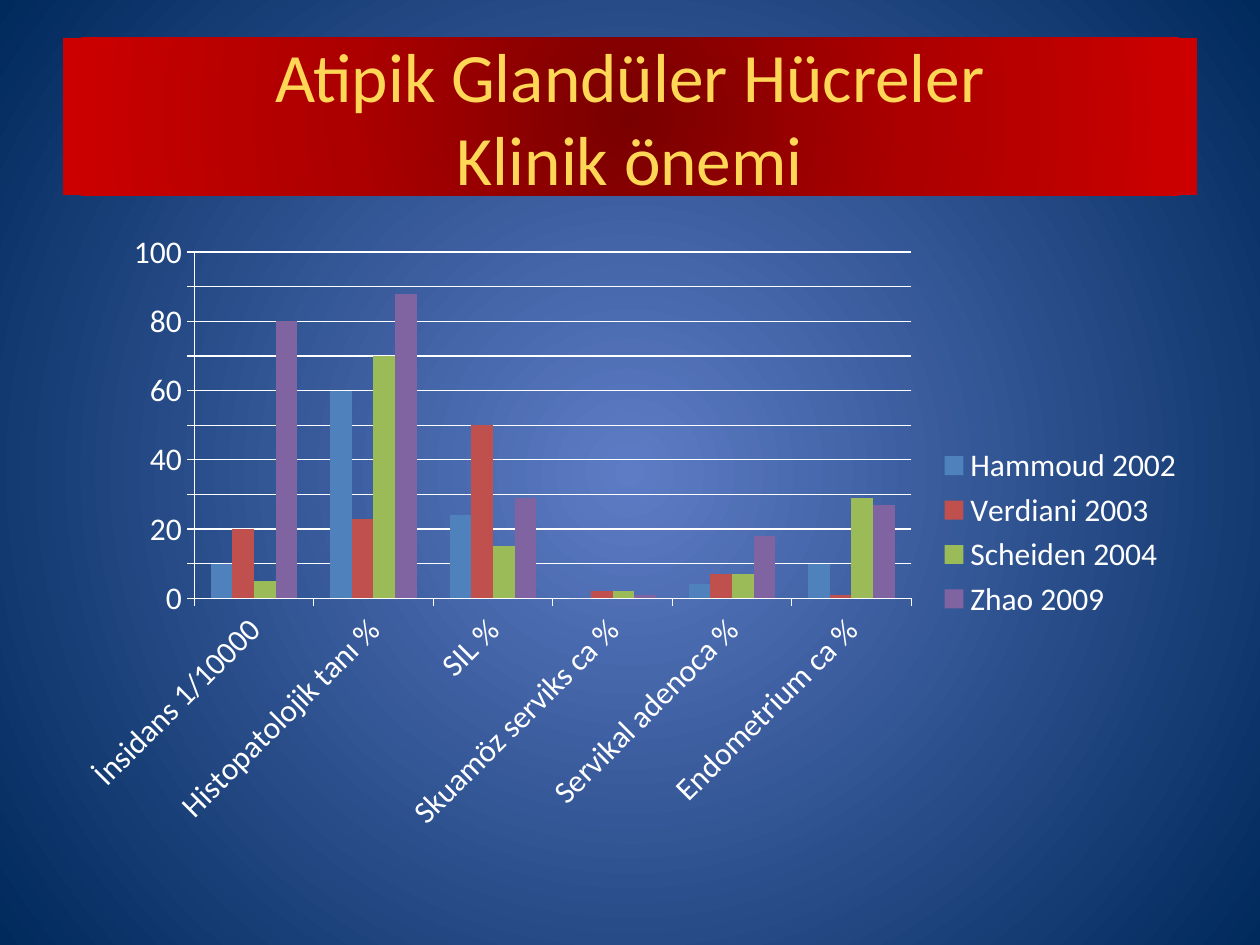
from dataclasses import dataclass

from lxml import etree
from pptx import Presentation
from pptx.chart.data import CategoryChartData
from pptx.dml.color import RGBColor
from pptx.enum import chart as charts, shapes, text
from pptx.oxml import ns, parse_xml
from pptx.util import Pt

FONT = "Calibri"
WHITE = RGBColor(0xFF, 0xFF, 0xFF)
GOLD = RGBColor(0xFF, 0xD7, 0x57)
BLUE = RGBColor(0x4F, 0x81, 0xBD)
RED = RGBColor(0xC0, 0x50, 0x4D)
GREEN = RGBColor(0x9B, 0xBB, 0x59)
PURPLE = RGBColor(0x80, 0x64, 0xA2)
BACKGROUND_STOPS = [(0, RGBColor(0x5E, 0x7C, 0xC5)), (100, RGBColor(0x00, 0x29, 0x5C))]
BANNER_STOPS = [
    (0, RGBColor(0x79, 0x00, 0x00)),
    (50, RGBColor(0xAC, 0x00, 0x00)),
    (100, RGBColor(0xCC, 0x00, 0x00)),
]


@dataclass
class Area:
    left: Pt
    top: Pt
    width: Pt
    height: Pt


@dataclass
class Study:
    name: str
    values: list[float]
    color: RGBColor


BANNER = Area(Pt(36), Pt(21.6), Pt(648), Pt(90))
CHART = Area(Pt(36), Pt(126), Pt(648), Pt(356.4))
PLOT = Area(Pt(111), Pt(144), Pt(409.8), Pt(198))
CATEGORIES = [
    "İnsidans 1/10000", "Histopatolojik tanı %", "SIL %",
    "Skuamöz serviks ca %", "Servikal adenoca %", "Endometrium ca %",
]
STUDIES = [
    Study("Hammoud 2002", [10, 60, 24, 0, 4, 10], BLUE),
    Study("Verdiani 2003", [20, 23, 50, 2, 7, 1], RED),
    Study("Scheiden 2004", [5, 70, 15, 2, 7, 29], GREEN),
    Study("Zhao 2009", [80, 88, 29, 1, 18, 27], PURPLE),
]


def paint_radial(fill, owner, stops: list[tuple[int, RGBColor]]) -> None:
    """Fill the owner element with a circular gradient from its centre."""
    fill.gradient()
    gradient = next(owner.iter(ns.qn("a:gradFill")))
    stop_xml = "".join(
        f'<a:gs pos="{percent * 1000}"><a:srgbClr val="{color}"/></a:gs>'
        for percent, color in stops
    )
    radial = parse_xml(
        f'<a:gradFill {ns.nsdecls("a")} rotWithShape="1"><a:gsLst>{stop_xml}</a:gsLst>'
        '<a:path path="circle">'
        '<a:fillToRect l="50000" t="50000" r="50000" b="50000"/></a:path></a:gradFill>'
    )
    gradient.getparent().replace(gradient, radial)


def add_banner(page, area: Area, lines: list[str]) -> None:
    banner = page.shapes.add_shape(
        shapes.MSO_SHAPE.RECTANGLE, area.left, area.top, area.width, area.height
    )
    banner.shadow.inherit = False
    banner.line.fill.background()
    paint_radial(banner.fill, banner.element, BANNER_STOPS)
    frame = banner.text_frame
    frame.word_wrap = True
    frame.vertical_anchor = text.MSO_ANCHOR.MIDDLE
    para = frame.paragraphs[0]
    para.alignment = text.PP_ALIGN.CENTER
    for index, line in enumerate(lines):
        if index:
            para.add_line_break()
        span = para.add_run()
        span.text = line
        span.font.name, span.font.size = FONT, Pt(39.6)
        span.font.color.rgb = GOLD


def fix_plot_area(chart, frame: Area, plot: Area) -> None:
    """Place the inner plot area inside the chart frame."""
    plot_area = next(chart.element.iter(ns.qn("c:plotArea")))
    for old in plot_area.findall(ns.qn("c:layout")):
        plot_area.remove(old)
    layout = etree.Element(ns.qn("c:layout"))
    manual = etree.SubElement(layout, ns.qn("c:manualLayout"))
    settings = {
        "layoutTarget": "inner", "xMode": "edge", "yMode": "edge",
        "x": (plot.left - frame.left) / frame.width,
        "y": (plot.top - frame.top) / frame.height,
        "w": plot.width / frame.width,
        "h": plot.height / frame.height,
    }
    for name, value in settings.items():
        etree.SubElement(manual, ns.qn(f"c:{name}"), val=str(value))
    plot_area.insert(0, layout)


def style_axis(axis) -> None:
    axis.major_tick_mark = charts.XL_TICK_MARK.OUTSIDE
    axis.minor_tick_mark = charts.XL_TICK_MARK.NONE
    axis.format.line.color.rgb = WHITE
    axis.format.line.width = Pt(0.75)
    font = axis.tick_labels.font
    font.name, font.size = FONT, Pt(18)
    font.color.rgb = WHITE


def add_study_chart(page, area: Area, plot_place: Area) -> None:
    data = CategoryChartData()
    data.categories = CATEGORIES
    for study in STUDIES:
        data.add_series(study.name, study.values)
    chart = page.shapes.add_chart(
        charts.XL_CHART_TYPE.COLUMN_CLUSTERED,
        area.left, area.top, area.width, area.height, data,
    ).chart
    chart.has_title = False
    chart.font.name, chart.font.size = FONT, Pt(18)
    chart.font.color.rgb = WHITE
    chart.has_legend = True
    chart.legend.position = charts.XL_LEGEND_POSITION.RIGHT
    chart.legend.include_in_layout = False

    plot = chart.plots[0]
    plot.gap_width, plot.overlap = 150, 0
    plot.vary_by_categories = False
    for series, study in zip(plot.series, STUDIES):
        series.format.fill.solid()
        series.format.fill.fore_color.rgb = study.color

    for axis in (chart.category_axis, chart.value_axis):
        style_axis(axis)
    values = chart.value_axis
    values.minimum_scale, values.maximum_scale, values.major_unit = 0, 100, 10
    values.has_major_gridlines = True
    values.major_gridlines.format.line.color.rgb = WHITE
    values.major_gridlines.format.line.width = Pt(0.75)
    category_axis = next(chart.element.iter(ns.qn("c:catAx")))
    label_body = next(category_axis.iter(ns.qn("a:bodyPr")))
    label_body.set("rot", str(-45 * 60000))
    fix_plot_area(chart, area, plot_place)


def main() -> None:
    deck = Presentation()
    deck.slide_width, deck.slide_height = Pt(720), Pt(540)
    page = deck.slides.add_slide(deck.slide_layouts[6])
    paint_radial(page.background.fill, page.element, BACKGROUND_STOPS)
    add_study_chart(page, CHART, PLOT)
    add_banner(page, BANNER, ["Atipik Glandüler Hücreler", "Klinik önemi"])
    deck.save("out.pptx")


if __name__ == "__main__":
    main()
